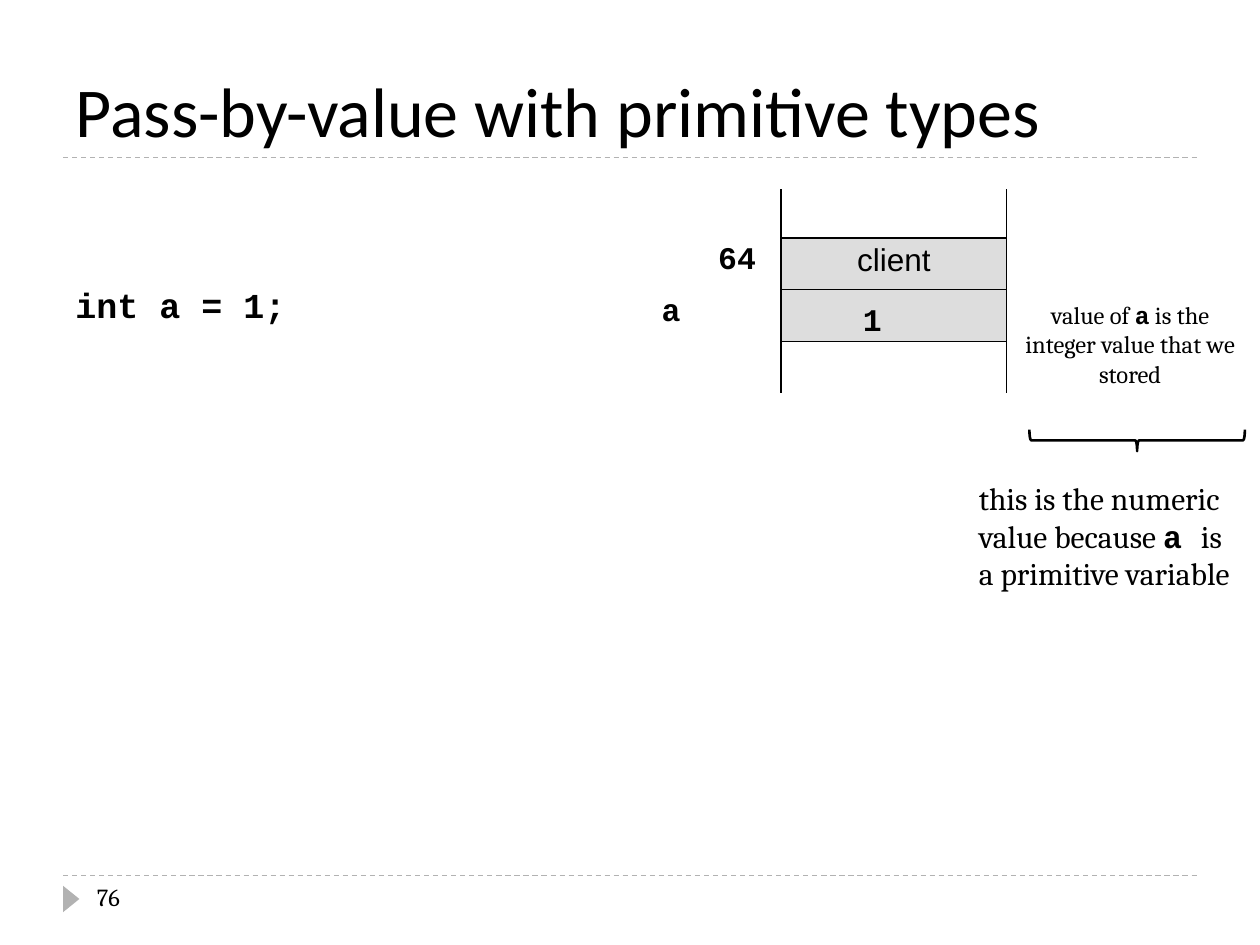
import dataclasses

import lxml.etree
import pptx
import pptx.dml.color
import pptx.enum.dml
import pptx.enum.shapes
import pptx.enum.text
import pptx.oxml.ns
import pptx.util

Inches = pptx.util.Inches
Pt = pptx.util.Pt
ALIGN = pptx.enum.text.PP_ALIGN
ANCHOR = pptx.enum.text.MSO_ANCHOR
SHAPE = pptx.enum.shapes.MSO_SHAPE
qn = pptx.oxml.ns.qn


@dataclasses.dataclass(frozen=True)
class Theme:
    ink: str = "000000"
    rule: str = "B2B2B2"
    cell: str = "DDDDDD"
    heading: str = "Calibri"
    prose: str = "Cambria"
    code: str = "Courier New"
    label: str = "Arial"
    title_size: int = 40
    code_size: int = 20
    text_size: int = 18
    note_size: int = 14


def rgb(value):
    return pptx.dml.color.RGBColor.from_string(value)


class SlideBuilder:
    def __init__(self, slide, theme):
        self.slide, self.theme = slide, theme

    def add_runs(self, paragraph, runs, size, align=ALIGN.LEFT):
        """Add (text, font) runs; code is always bold."""
        paragraph.alignment = align
        for text, face in runs:
            run = paragraph.add_run()
            run.text = text
            run.font.name = face
            run.font.size = Pt(size)
            run.font.bold = face == self.theme.code
            run.font.color.rgb = rgb(self.theme.ink)

    def title(self, text, left, top, width, height):
        heading = self.slide.shapes.title
        heading.left, heading.top = Inches(left), Inches(top)
        heading.width, heading.height = Inches(width), Inches(height)
        frame = heading.text_frame
        frame.auto_size = pptx.enum.text.MSO_AUTO_SIZE.NONE
        frame.vertical_anchor = ANCHOR.BOTTOM
        self.add_runs(frame.paragraphs[0], [(text, self.theme.heading)],
                      self.theme.title_size)

    def text(self, lines, left, top, width, height, size,
             align=ALIGN.LEFT, wrap=True):
        box = self.slide.shapes.add_textbox(
            Inches(left), Inches(top), Inches(width), Inches(height))
        frame = box.text_frame
        frame.word_wrap = wrap
        for index, runs in enumerate(lines):
            paragraph = frame.add_paragraph() if index else frame.paragraphs[0]
            self.add_runs(paragraph, runs, size, align)

    def dashed_rule(self, left, right, y):
        rule = self.slide.shapes.add_connector(
            pptx.enum.shapes.MSO_CONNECTOR.STRAIGHT,
            Inches(left), Inches(y), Inches(right), Inches(y))
        rule.line.color.rgb = rgb(self.theme.rule)
        rule.line.width = Pt(0.75)
        rule.line.dash_style = pptx.enum.dml.MSO_LINE.DASH
        lxml.etree.SubElement(rule._element.spPr, qn("a:effectLst"))

    def shape(self, kind, left, top, width, height, rotation,
              fill=None, line=None):
        shape = self.slide.shapes.add_shape(
            kind, Inches(left), Inches(top), Inches(width), Inches(height))
        shape.rotation = rotation
        shape.shadow.inherit = False
        if fill:
            shape.fill.solid()
            shape.fill.fore_color.rgb = rgb(fill)
        else:
            shape.fill.background()
        if line:
            shape.line.color.rgb = rgb(line)
            shape.line.width = Pt(1.5)
        else:
            shape.line.fill.background()

    def borders(self, cell, sides):
        properties = cell._tc.get_or_add_tcPr()
        for side in "LRTB":
            edge = lxml.etree.SubElement(
                properties, qn(f"a:ln{side}"), w=str(Pt(1)))
            if side in sides:
                paint = lxml.etree.SubElement(edge, qn("a:solidFill"))
                lxml.etree.SubElement(
                    paint, qn("a:srgbClr"), val=self.theme.ink)
            else:
                lxml.etree.SubElement(edge, qn("a:noFill"))

    def memory_table(self, left, top, widths, heights, entries, shaded_rows):
        """Draw name, address and value columns; only values are boxed."""
        table = self.slide.shapes.add_table(
            len(heights), len(widths), Inches(left), Inches(top),
            Inches(sum(widths)), Inches(sum(heights))).table
        table.first_row = table.horz_banding = False
        for column, width in zip(table.columns, widths):
            column.width = Inches(width)
        for row, height in zip(table.rows, heights):
            row.height = Inches(height)
        last = len(heights) - 1
        for r in range(len(heights)):
            value_sides = "LR" + "T" * (r > 0) + "B" * (r < last)
            for c, sides in enumerate(("", "R", value_sides)):
                cell = table.cell(r, c)
                cell.margin_top, cell.margin_bottom = Inches(0.04), Inches(0.02)
                self.borders(cell, sides)
                if c == 2 and r in shaded_rows:
                    cell.fill.solid()
                    cell.fill.fore_color.rgb = rgb(self.theme.cell)
                else:
                    cell.fill.background()
                if (r, c) in entries:
                    text, face, align = entries[r, c]
                    self.add_runs(cell.text_frame.paragraphs[0],
                                  [(text, face)], self.theme.text_size, align)


def main():
    deck = pptx.Presentation()
    deck.slide_width, deck.slide_height = Inches(10), Inches(7.5)
    theme = Theme()
    page = SlideBuilder(deck.slides.add_slide(deck.slide_layouts[5]), theme)

    # Page frame and title
    for y in (6.95, 1.25):
        page.dashed_rule(0.5, 9.5, y)
    page.shape(SHAPE.ISOSCELES_TRIANGLE, 0.46, 7.07, 0.21, 0.13, 90,
               fill=theme.rule)
    page.title("Pass-by-value with primitive types", 0.5, 0.17, 9, 1.08)
    page.text([[("76", theme.prose)]], 0.67, 6.95, 2.17, 0.4, theme.note_size)

    # Code statement
    page.text([[("int a = 1;", theme.code)]], 0.5, 2.2, 4, 0.4,
              theme.code_size)

    # Memory diagram
    page.memory_table(
        4.33, 1.5, (1.17, 0.7, 1.79), (0.39, 0.41, 0.41, 0.41),
        {(1, 1): ("64", theme.code, ALIGN.CENTER),
         (1, 2): ("client", theme.label, ALIGN.CENTER),
         (2, 0): ("a", theme.code, ALIGN.RIGHT)},
        shaded_rows=(1, 2))
    page.text([[("1", theme.code)]], 6.75, 2.33, 0.35, 0.4, theme.text_size,
              wrap=False)

    # Explanation of the stored value
    page.text(
        [[("value of ", theme.prose), ("a", theme.code),
          (" is the", theme.prose)],
         [("integer value that we stored", theme.prose)]],
        8.02, 2.33, 1.9, 0.81, theme.note_size, ALIGN.CENTER)
    page.shape(SHAPE.LEFT_BRACE, 8.94, 2.64, 0.17, 1.71, 270, line=theme.ink)
    page.text(
        [[("this is the numeric", theme.prose)],
         [("value because ", theme.prose), ("a ", theme.code),
          ("is", theme.prose)],
         [("a primitive variable", theme.prose)]],
        7.67, 3.75, 2.29, 1.01, theme.text_size, wrap=False)

    deck.save("out.pptx")


if __name__ == "__main__":
    main()
